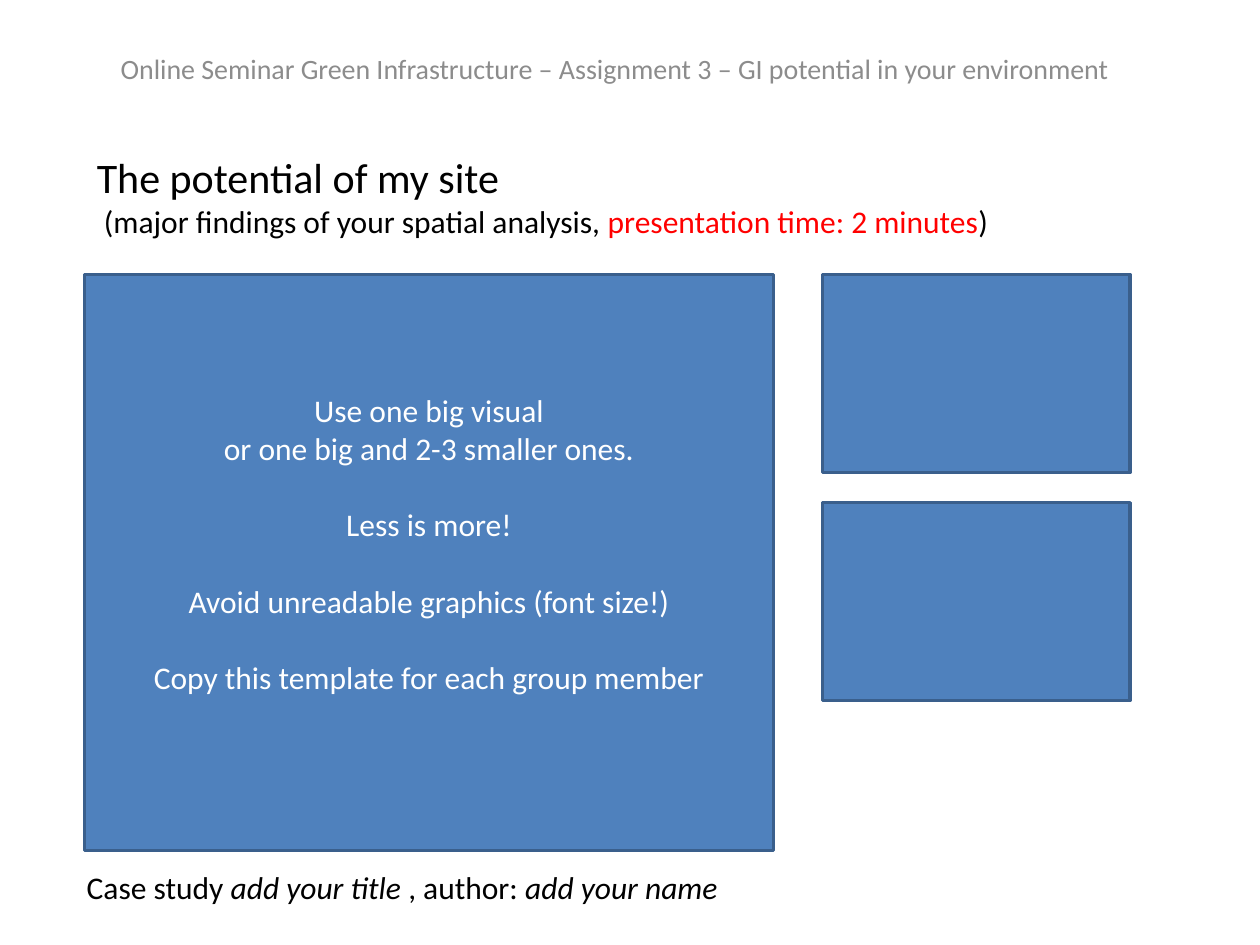
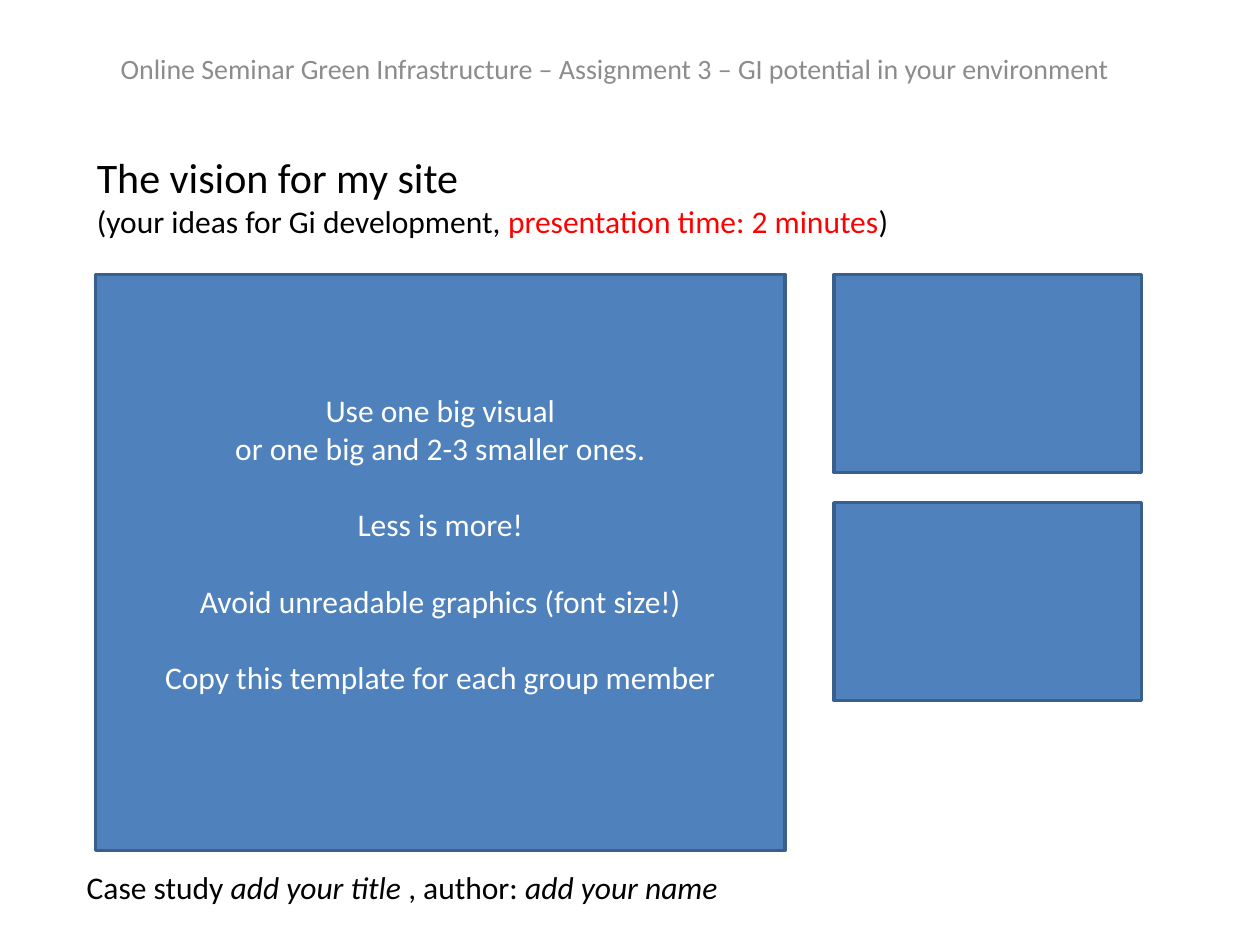
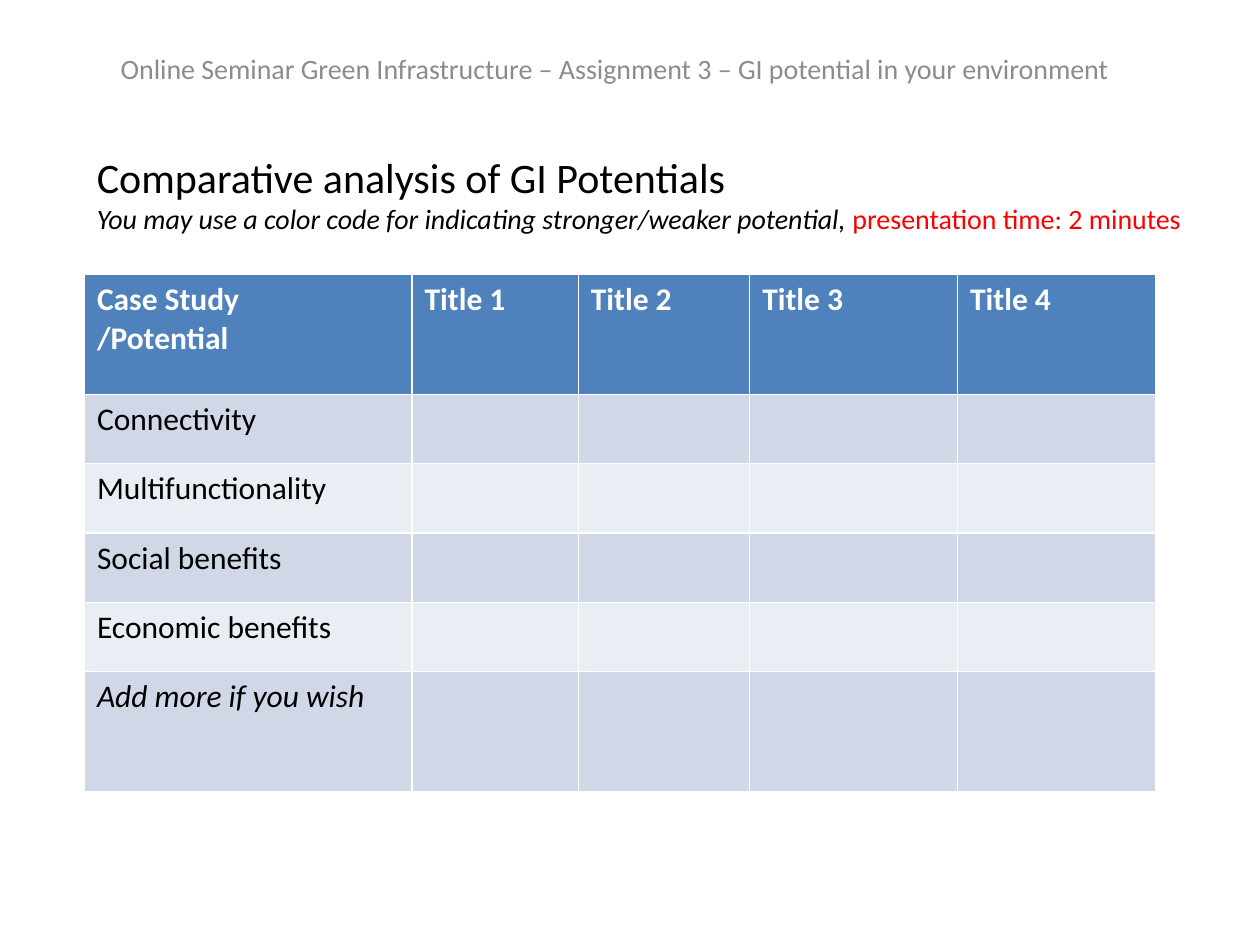
from pptx import Presentation
from pptx.dml.color import RGBColor
from pptx.enum.shapes import MSO_SHAPE
from pptx.enum.text import MSO_ANCHOR, MSO_AUTO_SIZE, PP_ALIGN
from pptx.util import Inches, Pt

COLORS = {
    "text": "000000",
    "muted": "8C8C8C",
    "alert": "FF0000",
    "white": "FFFFFF",
    "blue": "4F81BD",
    "outline": "3A5F8C",
    "band_dark": "D0D8E8",
    "band_light": "E9EDF4",
}
FONT = "Calibri"
LEFT = 0.67
CONTENT_TOP = 2.18

SEMINAR = "Online Seminar Green Infrastructure – Assignment 3 – GI potential in your environment"
TIME_LIMIT = "presentation time: 2 minutes"

# Advice lines, each with the space above it in points
ADVICE = [
    ("Use one big visual", 0),
    ("or one big and 2-3 smaller ones.", 0),
    ("Less is more!", 22),
    ("Avoid unreadable graphics (font size!)", 22),
    ("Copy this template for each group member", 22),
]

# Heading, opening words of the subtitle, left edge of the big visual
SITE_SLIDES = [
    ("The potential of my site", " (major findings of your spatial analysis, ", 0.67, 7.36),
    ("The vision for my site", "(your ideas for Gi development, ", 0.76, 6.56),
]

TITLES = ["Case Study\n/Potential", "Title 1", "Title 2", "Title 3", "Title 4"]
POTENTIALS = ["Connectivity", "Multifunctionality", "Social benefits",
              "Economic benefits", "Add more if you wish"]
COLUMN_WIDTHS = [2.6, 1.32, 1.36, 1.65, 1.57]
ROW_HEIGHTS = [0.95, 0.55, 0.55, 0.55, 0.55, 0.95]


def color(key):
    return RGBColor.from_string(COLORS[key])


def style(paragraph, size, color_key="text"):
    paragraph.font.name = FONT
    paragraph.font.size = Pt(size)
    paragraph.font.color.rgb = color(color_key)


def add_runs(paragraph, runs):
    """Add (text, colour key, italic) runs to a paragraph."""
    for text, color_key, italic in runs:
        run = paragraph.add_run()
        run.text = text
        run.font.color.rgb = color(color_key)
        run.font.italic = italic


def add_text_frame(slide, left, top, width, height, wrap=True):
    box = slide.shapes.add_textbox(Inches(left), Inches(top), Inches(width), Inches(height))
    frame = box.text_frame
    frame.word_wrap = wrap
    frame.auto_size = MSO_AUTO_SIZE.NONE if wrap else MSO_AUTO_SIZE.SHAPE_TO_FIT_TEXT
    return frame


def add_seminar_line(slide):
    line = add_text_frame(slide, 0.59, 0.36, 8.58, 0.47).paragraphs[0]
    line.text = SEMINAR
    line.alignment = PP_ALIGN.CENTER
    style(line, 16, "muted")


def add_heading(slide, text, width, height):
    frame = add_text_frame(slide, LEFT, 1.15, width, height, wrap=False)
    heading = frame.paragraphs[0]
    heading.text = text
    style(heading, 24)
    return frame


def add_author_line(slide):
    frame = add_text_frame(slide, 0.59, 6.98, 8.5, 0.39)
    frame.vertical_anchor = MSO_ANCHOR.MIDDLE
    frame.margin_top, frame.margin_bottom = 0, Inches(0.27)
    line = frame.paragraphs[0]
    style(line, 18)
    add_runs(line, [
        ("Case study ", "text", False),
        ("add your title ", "text", True),
        (", author: ", "text", False),
        ("add your name", "text", True),
    ])


def add_visual(slide, left, top, width, height):
    visual = slide.shapes.add_shape(
        MSO_SHAPE.RECTANGLE, Inches(left), Inches(top), Inches(width), Inches(height))
    visual.shadow.inherit = False
    visual.fill.solid()
    visual.fill.fore_color.rgb = color("blue")
    visual.line.color.rgb = color("outline")
    visual.line.width = Pt(2)
    return visual


def add_advice(visual):
    frame = visual.text_frame
    frame.word_wrap = True
    frame.vertical_anchor = MSO_ANCHOR.MIDDLE
    frame.margin_bottom = Inches(0.35)
    for index, (text, gap) in enumerate(ADVICE):
        line = frame.add_paragraph() if index else frame.paragraphs[0]
        line.text = text
        line.alignment = PP_ALIGN.CENTER
        line.space_before = Pt(gap)
        style(line, 18, "white")


def add_potentials_table(slide):
    table = slide.shapes.add_table(
        len(ROW_HEIGHTS), len(COLUMN_WIDTHS), Inches(LEFT), Inches(CONTENT_TOP),
        Inches(sum(COLUMN_WIDTHS)), Inches(sum(ROW_HEIGHTS))).table
    for column, width in zip(table.columns, COLUMN_WIDTHS):
        column.width = Inches(width)
    for row, height in zip(table.rows, ROW_HEIGHTS):
        row.height = Inches(height)

    blanks = [""] * (len(TITLES) - 1)
    rows = [TITLES] + [[potential] + blanks for potential in POTENTIALS]
    for r, texts in enumerate(rows):
        header = r == 0
        fill = "blue" if header else ("band_dark" if r % 2 else "band_light")
        for c, text in enumerate(texts):
            cell = table.cell(r, c)
            cell.fill.solid()
            cell.fill.fore_color.rgb = color(fill)
            cell.text = text
            for line in cell.text_frame.paragraphs:
                style(line, 18, "white" if header else "text")
                line.font.bold = header
                line.font.italic = text == POTENTIALS[-1]


def build_site_slide(slide, heading, intro, left, heading_width):
    add_author_line(slide)
    add_seminar_line(slide)
    subtitle = add_heading(slide, heading, heading_width, 0.81).add_paragraph()
    style(subtitle, 18)
    add_runs(subtitle, [(intro, "text", False), (TIME_LIMIT, "alert", False),
                        (")", "text", False)])

    # One big visual and two smaller ones beside it
    add_advice(add_visual(slide, left, CONTENT_TOP, 5.47, 4.57))
    for index in range(2):
        add_visual(slide, left + 5.86, CONTENT_TOP + index * 1.81, 2.44, 1.57)


def build_comparison_slide(slide):
    add_seminar_line(slide)
    add_heading(slide, "Comparative analysis of GI Potentials", 5.24, 0.5)
    add_potentials_table(slide)
    hint = add_text_frame(slide, LEFT, 1.55, 8.92, 0.37, wrap=False).paragraphs[0]
    style(hint, 16)
    add_runs(hint, [
        ("You may use a color code for indicating stronger/weaker potential, ", "text", True),
        (TIME_LIMIT, "alert", False),
    ])


def main():
    deck = Presentation()
    deck.slide_width, deck.slide_height = Inches(10), Inches(7.5)
    blank = deck.slide_layouts[6]
    for content in SITE_SLIDES:
        build_site_slide(deck.slides.add_slide(blank), *content)
    build_comparison_slide(deck.slides.add_slide(blank))
    deck.save("out.pptx")


if __name__ == "__main__":
    main()
